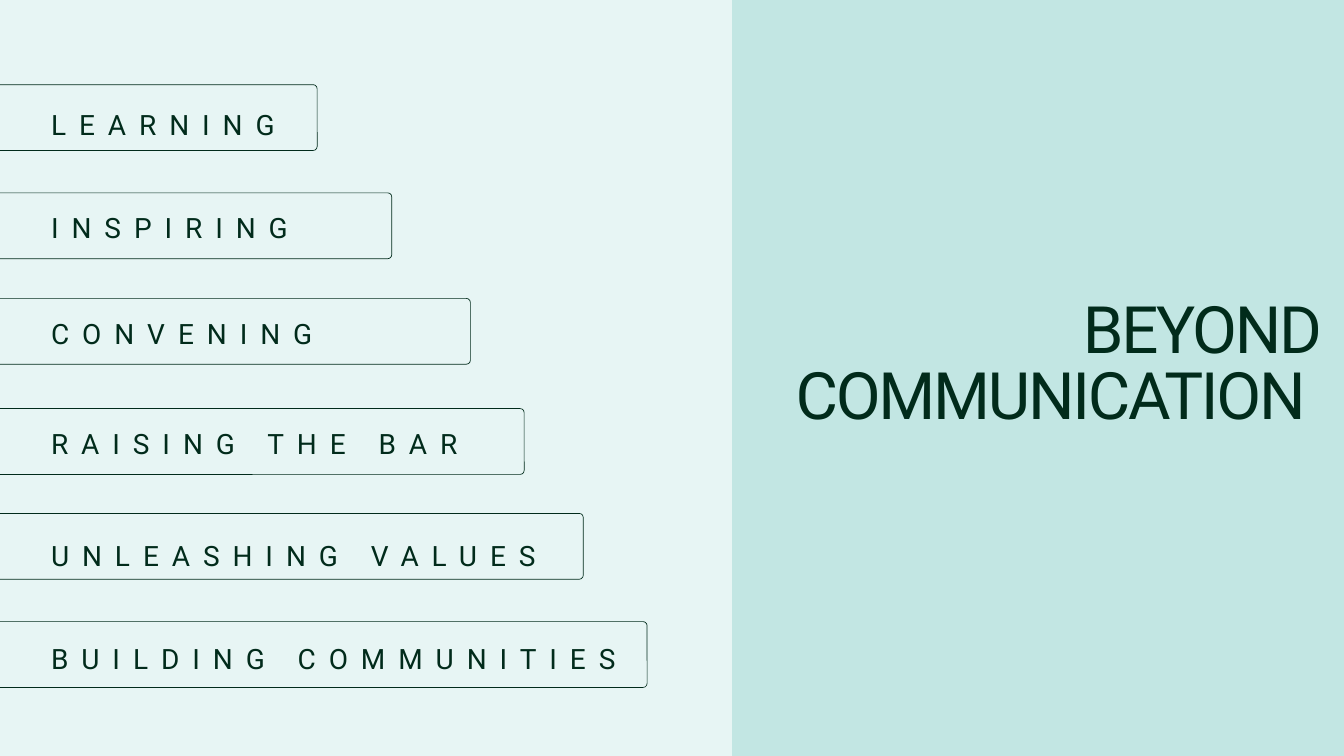
from lxml import etree
from pptx import Presentation
from pptx.dml.color import RGBColor
from pptx.enum.shapes import MSO_SHAPE
from pptx.enum.text import MSO_ANCHOR, MSO_AUTO_SIZE, PP_ALIGN
from pptx.oxml.ns import qn
from pptx.util import Inches, Pt

RECT, ROUND = MSO_SHAPE.RECTANGLE, MSO_SHAPE.ROUNDED_RECTANGLE
LEFT, RIGHT = PP_ALIGN.LEFT, PP_ALIGN.RIGHT

COLORS = {"back": "C2E6E3", "panel": "FFFFFF", "ink": "012B1B"}
FRAME = {
    "margin_left": 0, "margin_right": 0, "margin_top": 0, "margin_bottom": 0,
    "word_wrap": True, "auto_size": MSO_AUTO_SIZE.NONE,
    "vertical_anchor": MSO_ANCHOR.TOP,
}
HEAD = {"size": Pt(70), "name": "Roboto", "bold": False}
LABEL = {"size": Pt(30), "name": "Roboto", "bold": False}

TAB_H, RADIUS = 0.98, 0.06
TEXT_X, TEXT_H = 0.76, 0.59
# Label, label top, label width, tab left, tab right, tab top
TABS = [
    ("LEARNING", 1.49, 3.85, -3.75, 4.72, 1.26),
    ("INSPIRING", 3.02, 6.23, -3.11, 5.83, 2.87),
    ("CONVENING", 4.59, 7.04, -2.47, 7, 4.44),
    ("RAISING THE BAR", 6.23, 7.92, -1.78, 7.8, 6.08),
    ("UNLEASHING VALUES", 7.9, 8.86, -0.59, 8.68, 7.64),
    ("BUILDING COMMUNITIES", 9.44, 10.14, -1.14, 9.63, 9.25),
]


def color(key):
    return RGBColor.from_string(COLORS[key])


def apply(target, values):
    for key, value in values.items():
        setattr(target, key, value)


def write(shape, text, style, align, leading, spacing):
    """Fill a text shape with one line-spaced, letter-spaced paragraph."""
    frame = shape.text_frame
    apply(frame, FRAME)
    para = frame.paragraphs[0]
    apply(para, {"alignment": align, "line_spacing": Pt(leading)})
    run = para.add_run()
    run.text = text
    apply(run.font, style)
    run.font.color.rgb = color("ink")
    run._r.get_or_add_rPr().set("spc", str(round(spacing * 100)))


def add_panel(slide):
    panel = slide.shapes.add_shape(
        RECT, Inches(-1.85), 0, Inches(12.74), Inches(11.25))
    panel.shadow.inherit = False
    panel.line.fill.background()
    panel.fill.solid()
    panel.fill.fore_color.rgb = color("panel")
    tint = panel._element.spPr.find(f"{qn('a:solidFill')}/{qn('a:srgbClr')}")
    etree.SubElement(tint, qn("a:alpha")).set("val", "62000")


def add_title(slide):
    title = slide.shapes.title
    apply(title, {"left": Inches(10.9), "top": Inches(4.49),
                  "width": Inches(8.74), "height": Inches(2)})
    write(title, "BEYOND COMMUNICATION ", HEAD, RIGHT, 70, -2.4)


def add_label(slide, text, top, width):
    box = slide.shapes.add_textbox(
        Inches(TEXT_X), Inches(top), Inches(width), Inches(TEXT_H))
    write(box, text, LABEL, LEFT, 44.1, 13.9)


def add_tab(slide, left, right, top):
    """Outline a rounded tab that bleeds off the left edge."""
    tab = slide.shapes.add_shape(
        ROUND, Inches(left), Inches(top), Inches(right - left), Inches(TAB_H))
    tab.adjustments[0] = RADIUS / TAB_H
    tab.shadow.inherit = False
    tab.fill.background()
    tab.line.color.rgb = color("ink")
    tab.line.width = Pt(0.75)


def main():
    deck = Presentation()
    deck.slide_width, deck.slide_height = Inches(20), Inches(11.25)
    slide = deck.slides.add_slide(deck.slide_layouts[5])

    # Background and pale left panel
    slide.background.fill.solid()
    slide.background.fill.fore_color.rgb = color("back")
    add_panel(slide)

    # Title on the right
    add_title(slide)

    # Stepped tabs on the left
    for text, text_top, width, left, right, top in TABS:
        add_label(slide, text, text_top, width)
        add_tab(slide, left, right, top)

    deck.save("out.pptx")


if __name__ == "__main__":
    main()
